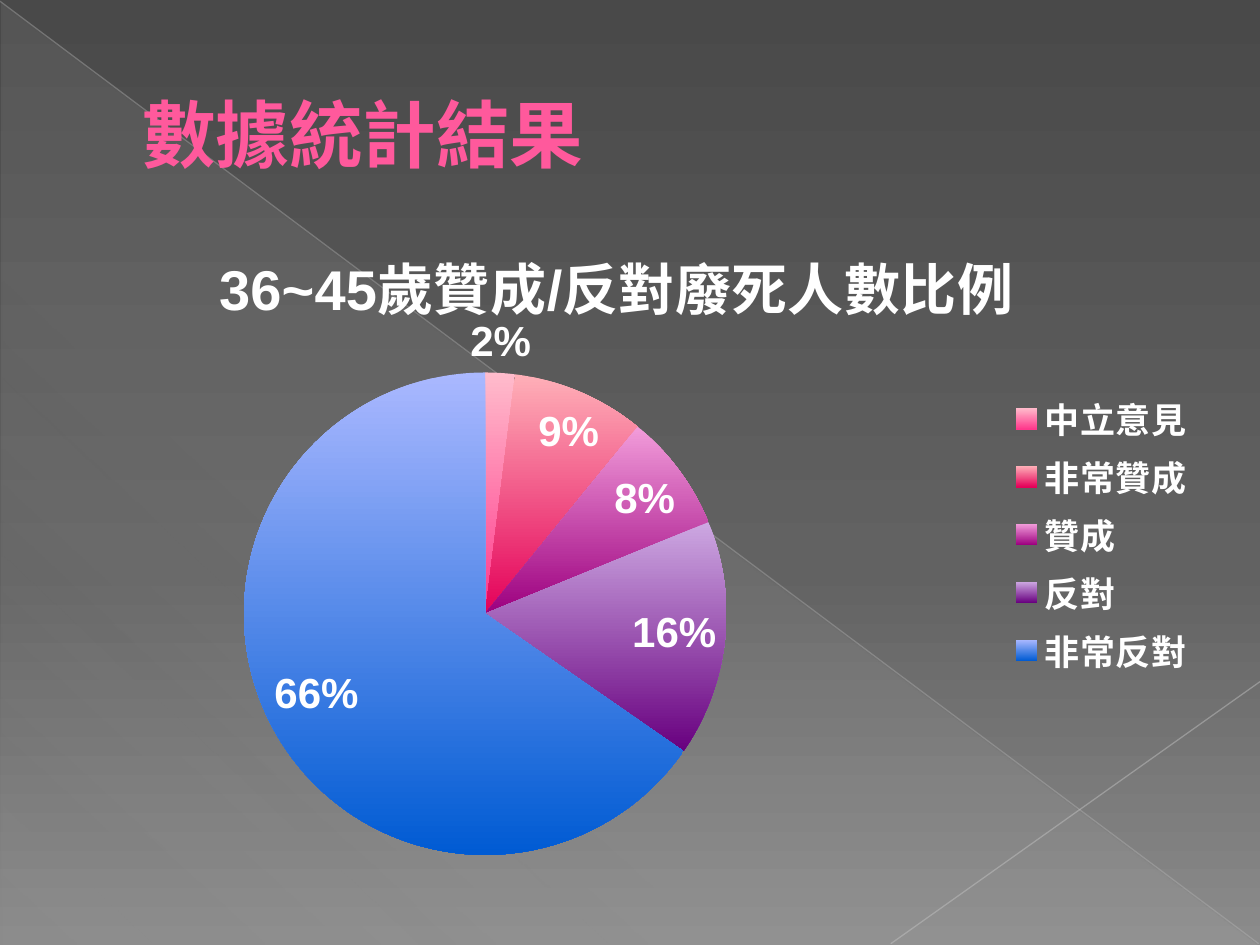
from dataclasses import dataclass

from lxml.etree import SubElement
from pptx import Presentation
from pptx.chart.data import CategoryChartData
from pptx.dml.color import RGBColor
from pptx.enum.chart import XL_CHART_TYPE as ChartType
from pptx.enum.chart import XL_LABEL_POSITION as LabelPosition
from pptx.enum.chart import XL_LEGEND_POSITION as LegendPosition
from pptx.enum.shapes import MSO_CONNECTOR as Connector
from pptx.enum.shapes import MSO_SHAPE as Shape
from pptx.enum.text import MSO_ANCHOR as Anchor
from pptx.enum.text import PP_ALIGN as Align
from pptx.oxml.ns import qn
from pptx.util import Inches, Pt


@dataclass(frozen=True)
class Theme:
    title_font: str = "TeX Gyre Adventor"
    chart_font: str = "Arial"
    title_color: str = "FF599C"
    text_color: str = "FFFFFF"
    title_size: int = 42
    chart_title_size: int = 32
    label_size: int = 24
    legend_size: int = 20
    line_width: float = 0.75
    # Gradient stops: position, colour, opacity (all in percent)
    background: tuple = ((0, "494949", 100), (60, "626262", 100), (100, "8B8B8B", 100))
    triangle: tuple = ((0, "D2D2D2", 10), (70, "D2D2D2", 8), (100, "D2D2D2", 1))
    long_line: tuple = ("BEBEBE", 35)
    short_line: tuple = ("C5C5C5", 45)


THEME = Theme()

# Opinion, percentage, top colour, bottom colour
OPINIONS = (
    ("中立意見", 2, "FFBCCC", "FF388C"),
    ("非常贊成", 9, "FFB0B8", "E40059"),
    ("贊成", 8, "F29CDA", "9C007F"),
    ("反對", 16, "CDA8E2", "68007F"),
    ("非常反對", 66, "AAB8FF", "005BD3"),
)


def style_font(font, size, color=THEME.text_color, name=THEME.chart_font, bold=True):
    font.size = Pt(size)
    font.bold = bold
    font.name = name
    font.color.rgb = RGBColor.from_string(color)


def write_text(text_frame, text, align=None, **font_format):
    paragraph = text_frame.paragraphs[0]
    paragraph.alignment = align
    run = paragraph.add_run()
    run.text = text
    style_font(run.font, **font_format)
    return paragraph


def add_alpha(color_element, opacity):
    SubElement(color_element, qn("a:alpha"), val=str(opacity * 1000))


def fill_gradient(fill, owner, stops, angle):
    """Fill with any number of stops; angle is clockwise from left to right."""
    fill.gradient()
    fill.gradient_angle = 360 - angle
    stop_list = next(owner.iter(qn("a:gsLst")))
    for old_stop in list(stop_list):
        stop_list.remove(old_stop)
    for position, color, opacity in stops:
        stop = SubElement(stop_list, qn("a:gs"), pos=str(position * 1000))
        color_element = SubElement(stop, qn("a:srgbClr"), val=color)
        if opacity < 100:
            add_alpha(color_element, opacity)


def add_line(slide, start, end, color, opacity):
    line = slide.shapes.add_connector(
        Connector.STRAIGHT, *(Inches(value) for value in (*start, *end)))
    line.line.width = Pt(THEME.line_width)
    line.line.color.rgb = RGBColor.from_string(color)
    add_alpha(next(line.element.iter(qn("a:srgbClr"))), opacity)
    SubElement(line.element.spPr, qn("a:effectLst"))


def add_backdrop(slide, left, top, width, height):
    fill_gradient(slide.background.fill, slide.element, THEME.background, 90)
    triangle = slide.shapes.add_shape(
        Shape.RIGHT_TRIANGLE, Inches(left + 0.01), Inches(top + 0.02),
        Inches(width - 0.02), Inches(height - 0.02))
    triangle.shadow.inherit = False
    triangle.line.fill.background()
    fill_gradient(triangle.fill, triangle.element, THEME.triangle, 133)

    right, bottom = left + width, top + height - 0.01
    add_line(slide, (left, top + 0.01), (right - 0.01, bottom), *THEME.long_line)
    add_line(slide, (right, top + 5.41), (left + 7.07, bottom), *THEME.short_line)


def add_title(slide, text, left, top, width, height):
    title = slide.shapes.title
    title.left, title.top = Inches(left), Inches(top)
    title.width, title.height = Inches(width), Inches(height)
    frame = title.text_frame
    frame.word_wrap = True
    frame.vertical_anchor = Anchor.MIDDLE
    frame.margin_left = frame.margin_right = Inches(0.1)
    frame.margin_top = frame.margin_bottom = Inches(0.1)
    paragraph = write_text(frame, text, align=Align.LEFT, size=THEME.title_size,
                           color=THEME.title_color, name=THEME.title_font)
    properties = paragraph._p.get_or_add_pPr()
    properties.set("marL", str(Inches(0.53)))
    properties.set("indent", "0")
    # Bring the title in front of the backdrop
    slide.shapes.element.append(title.element)


def set_layout(element, inner=False, **fractions):
    """Place a chart part by fractions (x, y, w, h) of the chart box."""
    for old_layout in element.findall(qn("c:layout")):
        element.remove(old_layout)
    layout = SubElement(element, qn("c:layout"))
    manual = SubElement(layout, qn("c:manualLayout"))
    if inner:
        SubElement(manual, qn("c:layoutTarget"), val="inner")
    for axis in ("x", "y"):
        SubElement(manual, qn(f"c:{axis}Mode"), val="edge")
    for key, value in fractions.items():
        SubElement(manual, qn(f"c:{key}"), val=str(value))
    # The schema wants the layout right after the text or legend position
    leading = [child for child in element
               if child.tag in (qn("c:tx"), qn("c:legendPos"))]
    element.insert(len(leading), layout)


def add_opinion_chart(slide, title, left, top, width, height):
    data = CategoryChartData()
    data.categories = [name for name, *_ in OPINIONS]
    data.add_series("Series 1", [value for _, value, *_ in OPINIONS])
    chart = slide.shapes.add_chart(
        ChartType.PIE, Inches(left), Inches(top), Inches(width), Inches(height),
        data).chart
    style_font(chart.font, 10, color="000000", bold=False)

    chart.has_title = True
    write_text(chart.chart_title.text_frame, title, size=THEME.chart_title_size)
    set_layout(chart.chart_title._element, x=0.13, y=0.06)

    chart.has_legend = True
    chart.legend.position = LegendPosition.RIGHT
    chart.legend.include_in_layout = False
    style_font(chart.legend.font, THEME.legend_size)
    set_layout(chart.legend._element, x=0.82, y=0.29, w=0.17, h=0.43)

    plot = chart.plots[0]
    plot.vary_by_categories = True
    set_layout(plot._element.getparent(), inner=True, x=0.16, y=0.27, w=0.42, h=0.7)

    plot.has_data_labels = True
    labels = plot.data_labels
    labels.show_value = True
    labels.number_format = '0"%"'
    labels.number_format_is_linked = False
    labels.position = LabelPosition.BEST_FIT
    style_font(labels.font, THEME.label_size)

    for index, (_, _, *colors) in enumerate(OPINIONS):
        slice_format = plot.series[0].points[index].format
        slice_format.line.fill.background()
        slice_format.fill.gradient()
        slice_format.fill.gradient_angle = 270
        for stop, color in zip(slice_format.fill.gradient_stops, colors):
            stop.color.rgb = RGBColor.from_string(color)


def main():
    presentation = Presentation()
    presentation.slide_width, presentation.slide_height = Inches(10), Inches(7.5)
    slide = presentation.slides.add_slide(presentation.slide_layouts[5])
    add_backdrop(slide, 0, 0, 10, 7.5)
    add_title(slide, "數據統計結果", 0.5, 0.29, 9, 1.53)
    add_opinion_chart(slide, "36~45歲贊成/反對廢死人數比例", 0.47, 1.48, 9.14, 5.47)
    presentation.save("out.pptx")


if __name__ == "__main__":
    main()
